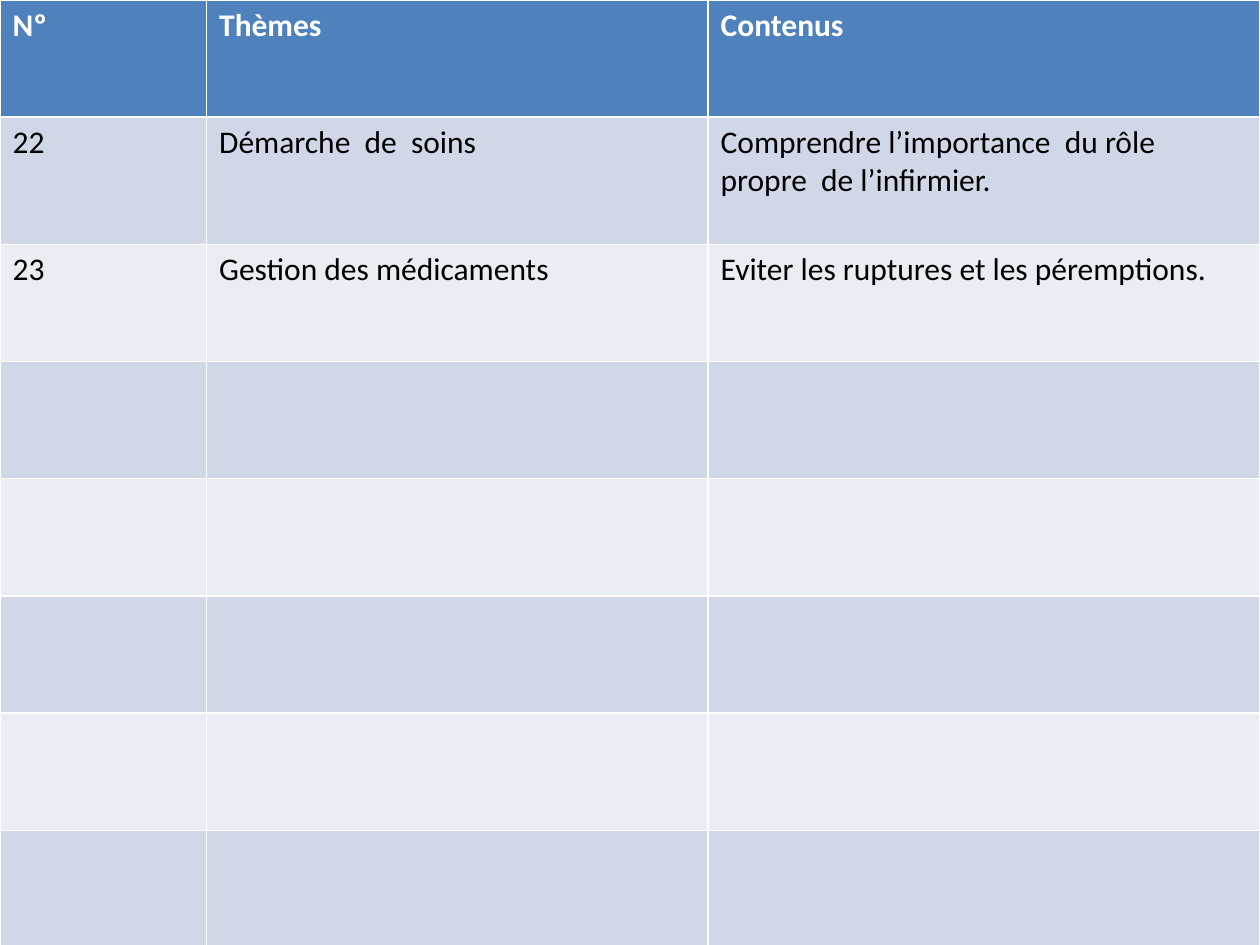
from pptx import Presentation
from pptx.dml.color import RGBColor
from pptx.util import Inches, Pt

WHITE = RGBColor(0xFF, 0xFF, 0xFF)
BLACK = RGBColor(0x00, 0x00, 0x00)
BLUE = RGBColor(0x4F, 0x81, 0xBD)
BAND_DARK = RGBColor(0xD0, 0xD8, 0xE8)
BAND_LIGHT = RGBColor(0xE9, 0xED, 0xF4)

COL_WIDTHS = [1.64, 3.98, 4.38]
ROW_COUNT = 8
ROW_HEIGHT = 0.93
TALL_ROW, TALL_HEIGHT = 1, 1.01

THEMES = [
    ("Nº", "Thèmes", "Contenus"),
    ("22", "Démarche  de  soins",
     "Comprendre l’importance  du rôle  propre  de l’infirmier."),
    ("23", "Gestion des médicaments", "Eviter les ruptures et les péremptions."),
]


def fill_cell(cell, text, fill, color, bold):
    cell.fill.solid()
    cell.fill.fore_color.rgb = fill
    p = cell.text_frame.paragraphs[0]
    p.font.name = "Calibri"
    p.font.size = Pt(18)
    p.font.bold = bold
    p.font.color.rgb = color
    if text:
        p.add_run().text = text


def add_themes_table(s):
    # The default table style supplies the white cell borders
    table = s.shapes.add_table(ROW_COUNT, len(COL_WIDTHS), Inches(0), Inches(0),
                               Inches(10), Inches(7.5)).table
    for column, width in zip(table.columns, COL_WIDTHS):
        column.width = Inches(width)

    for i, row in enumerate(table.rows):
        row.height = Inches(TALL_HEIGHT if i == TALL_ROW else ROW_HEIGHT)
        header = i == 0
        band = BAND_DARK if i % 2 else BAND_LIGHT
        texts = THEMES[i] if i < len(THEMES) else [""] * len(COL_WIDTHS)
        for cell, text in zip(row.cells, texts):
            fill_cell(cell, text, BLUE if header else band,
                      WHITE if header else BLACK, header)


def main():
    prs = Presentation()
    prs.slide_width, prs.slide_height = Inches(10), Inches(7.5)
    s = prs.slides.add_slide(prs.slide_layouts[6])  # blank layout
    add_themes_table(s)
    prs.save("out.pptx")


if __name__ == "__main__":
    main()
